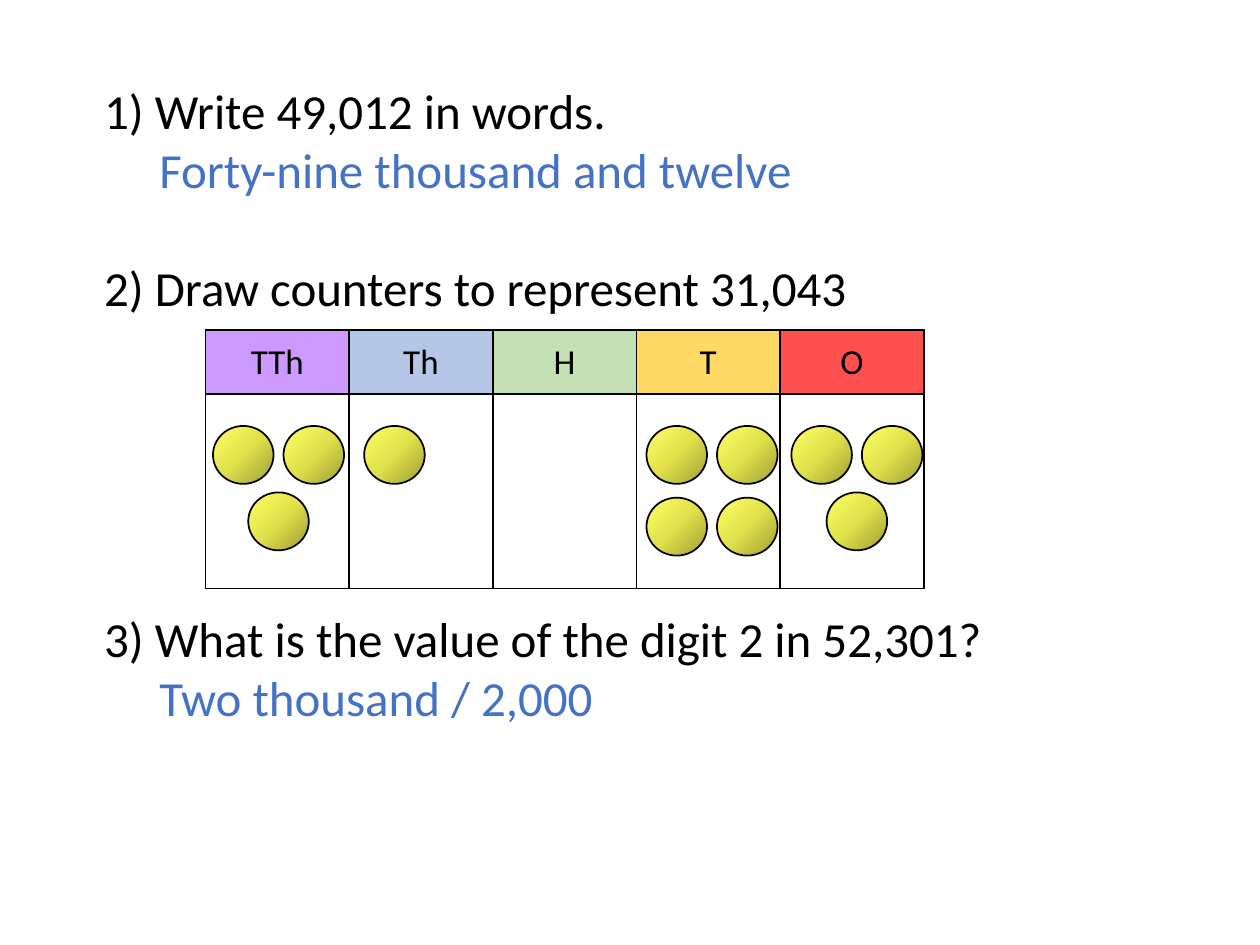
from dataclasses import dataclass

from lxml.etree import SubElement
from pptx import Presentation
from pptx.dml.color import RGBColor
from pptx.enum.shapes import MSO_SHAPE
from pptx.enum.text import MSO_ANCHOR, PP_ALIGN
from pptx.oxml import parse_xml
from pptx.oxml.ns import nsdecls, qn
from pptx.util import Pt


@dataclass(frozen=True)
class Theme:
    font: str = "Calibri"
    body_size: float = 28
    head_size: float = 20
    ink: str = "000000"
    answer: str = "4472C4"
    counter: tuple = ((0, "9E9E36"), (50, "E1E14C"), (100, "FFFF66"))
    columns: tuple = (("TTh", "CC99FF"), ("Th", "B4C7E7"), ("H", "C5E0B4"),
                      ("T", "FFD966"), ("O", "FF5050"))


class SlideBuilder:
    def __init__(self, prs, theme):
        self.theme = theme
        self.s = prs.slides.add_slide(prs.slide_layouts[6])

    def style(self, p, size, color):
        p.font.name = self.theme.font
        p.font.size = Pt(size)
        p.font.color.rgb = RGBColor.from_string(color)

    def questions(self, x, y, w, h, items):
        """Each item is (text, is_answer, space before)."""
        tf = self.s.shapes.add_textbox(Pt(x), Pt(y), Pt(w), Pt(h)).text_frame
        tf.word_wrap = True
        for i, (text, is_answer, before) in enumerate(items):
            p = tf.add_paragraph() if i else tf.paragraphs[0]
            p.text = text
            p.space_before = Pt(before)
            if is_answer:
                p._p.get_or_add_pPr().set("marL", str(Pt(31.5)))
            color = self.theme.answer if is_answer else self.theme.ink
            self.style(p, self.theme.body_size, color)

    def counter(self, x, y, w=34.6, h=33.1):
        sp = self.s.shapes.add_shape(MSO_SHAPE.OVAL, Pt(x), Pt(y), Pt(w), Pt(h))
        sp.shadow.inherit = False
        sp.line.color.rgb = RGBColor.from_string(self.theme.ink)
        sp.line.width = Pt(1)
        # Radial gradient centred on the lower right corner
        stops = "".join(f'<a:gs pos="{pos * 1000}"><a:srgbClr val="{c}"/></a:gs>'
                        for pos, c in self.theme.counter)
        fill = parse_xml(
            f'<a:gradFill {nsdecls("a")} rotWithShape="1"><a:gsLst>{stops}</a:gsLst>'
            '<a:path path="circle"><a:fillToRect l="100000" t="100000"/></a:path>'
            '</a:gradFill>')
        sp._element.spPr.find(qn("a:prstGeom")).addnext(fill)

    def borders(self, cell):
        tc_pr = cell._tc.get_or_add_tcPr()
        for i, side in enumerate(("lnL", "lnR", "lnT", "lnB")):
            ln = parse_xml(
                f'<a:{side} {nsdecls("a")} w="{Pt(1)}"/>')
            solid = SubElement(ln, qn("a:solidFill"))
            SubElement(solid, qn("a:srgbClr"), val=self.theme.ink)
            tc_pr.insert(i, ln)

    def place_value_table(self, x, y, col_w, row_heights):
        columns = self.theme.columns
        table = self.s.shapes.add_table(
            len(row_heights), len(columns), Pt(x), Pt(y),
            Pt(col_w * len(columns)), Pt(sum(row_heights))).table
        table.first_row = table.horz_banding = False
        for row, height in zip(table.rows, row_heights):
            row.height = Pt(height)
        for i, (name, color) in enumerate(columns):
            table.columns[i].width = Pt(col_w)
            head, body = table.cell(0, i), table.cell(1, i)
            head.text = name
            head.vertical_anchor = MSO_ANCHOR.MIDDLE
            p = head.text_frame.paragraphs[0]
            p.alignment = PP_ALIGN.CENTER
            self.style(p, self.theme.head_size, self.theme.ink)
            head.fill.solid()
            head.fill.fore_color.rgb = RGBColor.from_string(color)
            body.fill.background()
            for cell in (head, body):
                self.borders(cell)


def main():
    prs = Presentation()
    prs.slide_width, prs.slide_height = Pt(720), Pt(540)
    slide = SlideBuilder(prs, Theme())

    # Questions and answers, with room for the table above question 3
    slide.questions(52.5, 42.5, 520.5, 482.4, [
        ("1) Write 49,012 in words.", False, 0),
        ("Forty-nine thousand and twelve", True, 0),
        ("2) Draw counters to represent 31,043", False, 34),
        ("3) What is the value of the digit 2 in 52,301?", False, 167),
        ("Two thousand / 2,000", True, 0),
    ])

    # Counters: offsets from the first counter in each column
    step = 40.3
    pair = [(0, 0), (step, 0)]
    three = pair + [(step / 2, 38)]
    four = pair + [(dx, 41) for dx, _ in pair]
    for left, offsets in ((121.7, three), (208.1, pair[:1]),
                          (369.4, four), (452.2, three)):
        for dx, dy in offsets:
            slide.counter(left + dx, 243.4 + dy)

    # Place value table
    slide.place_value_table(117.4, 188.6, 82.1, (36.7, 110.9))

    prs.save("out.pptx")


if __name__ == "__main__":
    main()
